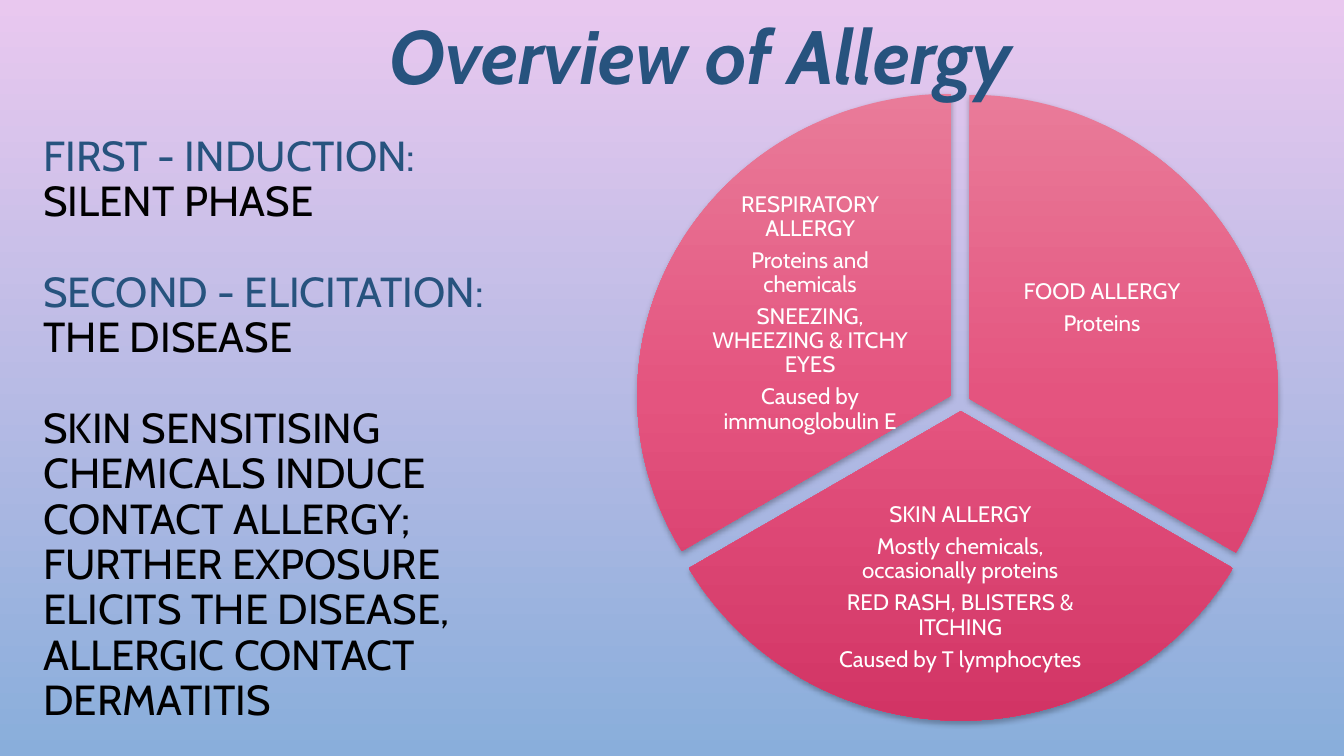
from copy import deepcopy
from dataclasses import dataclass

from lxml import etree
from pptx import Presentation
from pptx import util as u
from pptx.dml import color as dml
from pptx.enum import shapes, text
from pptx.oxml import ns

FONT = "Cabin"
COLOURS = {
    "sky_top": "E9C8EF",
    "sky_bottom": "89AEDB",
    "pink_top": "E97B99",
    "pink_middle": "E4547F",
    "pink_bottom": "D23465",
    "heading": "27537E",
    "body": "000000",
    "label": "FFFFFF",
    "shadow": "000000",
}


@dataclass
class Box:
    left: float
    top: float
    width: float
    height: float

    def lengths(self) -> list:
        return [u.Inches(n) for n in (self.left, self.top, self.width, self.height)]


@dataclass
class Sector:
    """A third of the pie; angles run clockwise from three o'clock."""
    pie: Box
    start: int
    end: int
    label: Box
    lines: list[str]


@dataclass
class BodyLine:
    text: str
    colour: str
    space_before: float = 0


SECTORS = [
    Sector(Box(6.55, 0.94, 6.13, 6.03), 270, 30, Box(9.89, 2.05, 2.08, 2.01),
           ["FOOD ALLERGY", "Proteins"]),
    Sector(Box(6.4, 1.01, 6.26, 6.14), 30, 150, Box(8.11, 4.88, 2.83, 1.9),
           ["SKIN ALLERGY", "Mostly chemicals, occasionally proteins",
            "RED RASH, BLISTERS & ITCHING", "Caused by T lymphocytes"]),
    Sector(Box(6.32, 0.93, 6.22, 5.99), 150, 270, Box(6.98, 2.11, 2.11, 2),
           ["RESPIRATORY ALLERGY", "Proteins and chemicals",
            "SNEEZING, WHEEZING & ITCHY EYES", "Caused by immunoglobulin E"]),
]

BODY_GAP = 32.4
BODY_LINES = [
    BodyLine("FIRST - INDUCTION:", "heading"),
    BodyLine("SILENT PHASE", "body"),
    BodyLine("SECOND - ELICITATION:", "heading", BODY_GAP),
    BodyLine("THE DISEASE", "body"),
    BodyLine("SKIN SENSITISING CHEMICALS INDUCE CONTACT ALLERGY; FURTHER EXPOSURE "
             "ELICITS THE DISEASE, ALLERGIC CONTACT DERMATITIS", "body", BODY_GAP),
]


def rgb(name: str) -> dml.RGBColor:
    return dml.RGBColor.from_string(COLOURS[name])


def fill_downwards(fill, names: list[str]) -> None:
    """Apply a top-to-bottom gradient with evenly spaced stops."""
    fill.gradient()
    fill.gradient_angle = 270
    stop_list = fill.gradient_stops[0]._gs.getparent()
    while len(stop_list) < len(names):
        stop_list.append(deepcopy(stop_list[-1]))
    for index, (stop, name) in enumerate(zip(fill.gradient_stops, names)):
        stop.color.rgb = rgb(name)
        stop.position = index / (len(names) - 1)


def add_soft_shadow(shape) -> None:
    shape.shadow.inherit = False
    effects = shape._element.spPr.find(ns.qn("a:effectLst"))
    shadow = etree.SubElement(effects, ns.qn("a:outerShdw"), blurRad=str(u.Pt(4)),
                              dist=str(u.Pt(2)), dir="5400000", rotWithShape="0")
    colour = etree.SubElement(shadow, ns.qn("a:srgbClr"), val=COLOURS["shadow"])
    etree.SubElement(colour, ns.qn("a:alpha"), val="28000")


def set_frame(frame, insets: tuple, anchor) -> None:
    frame.word_wrap = True
    frame.auto_size = text.MSO_AUTO_SIZE.NONE
    frame.vertical_anchor = anchor
    (frame.margin_left, frame.margin_top,
     frame.margin_right, frame.margin_bottom) = [u.Inches(inset) for inset in insets]


def format_runs(paragraph, size: float, colour: str) -> None:
    for run in paragraph.runs:
        run.font.name = FONT
        run.font.size = u.Pt(size)
        run.font.color.rgb = rgb(colour)


def place(shape, box: Box) -> None:
    shape.left, shape.top, shape.width, shape.height = box.lengths()


def add_sector(slide, sector: Sector) -> None:
    pie = slide.shapes.add_shape(shapes.MSO_SHAPE.PIE, *sector.pie.lengths())
    # Adjustments count 100000ths, angles 60000ths of a degree.
    pie.adjustments[0] = sector.start * 0.6
    pie.adjustments[1] = sector.end * 0.6
    fill_downwards(pie.fill, ["pink_top", "pink_middle", "pink_bottom"])
    pie.line.fill.background()
    add_soft_shadow(pie)

    frame = slide.shapes.add_textbox(*sector.label.lengths()).text_frame
    set_frame(frame, (0.02,) * 4, text.MSO_ANCHOR.MIDDLE)
    frame.text = "\n".join(sector.lines)
    for paragraph in frame.paragraphs:
        paragraph.alignment = text.PP_ALIGN.CENTER
        paragraph.line_spacing = 0.9
        paragraph.space_after = u.Pt(5.6)
        format_runs(paragraph, 16, "label")


def fill_body(body) -> None:
    place(body, Box(0.36, 1.54, 5.39, 5.9))
    frame = body.text_frame
    set_frame(frame, (0.07, 0.04, 0.07, 0.49), text.MSO_ANCHOR.MIDDLE)
    frame.text = "\n".join(line.text for line in BODY_LINES)
    for paragraph, line in zip(frame.paragraphs, BODY_LINES):
        properties = paragraph._p.get_or_add_pPr()
        properties.set("marL", "0")
        properties.set("indent", "0")
        etree.SubElement(properties, ns.qn("a:buNone"))
        paragraph.alignment = text.PP_ALIGN.LEFT
        paragraph.line_spacing = 0.9
        paragraph.space_before = u.Pt(line.space_before)
        format_runs(paragraph, 30, line.colour)


def fill_title(title) -> None:
    place(title, Box(3.76, 0.04, 6.58, 1.01))
    set_frame(title.text_frame, (0.1, 0.05, 0.1, 0.05), text.MSO_ANCHOR.TOP)
    title.text_frame.text = "Overview of Allergy"
    paragraph = title.text_frame.paragraphs[0]
    paragraph.alignment = text.PP_ALIGN.LEFT
    format_runs(paragraph, 54, "heading")
    paragraph.runs[0].font.bold = True
    paragraph.runs[0].font.italic = True


def main() -> None:
    presentation = Presentation()
    presentation.slide_width = u.Inches(13.33)
    presentation.slide_height = u.Inches(7.5)
    slide = presentation.slides.add_slide(presentation.slide_layouts[1])
    fill_downwards(slide.background.fill, ["sky_top", "sky_bottom"])
    for sector in SECTORS:
        add_sector(slide, sector)
    title, body = slide.shapes.title, slide.placeholders[1]
    fill_body(body)
    fill_title(title)
    # The title overlaps the pie, so both placeholders go to the front.
    for placeholder in (body, title):
        slide.shapes._spTree.append(placeholder._element)
    presentation.save("out.pptx")


if __name__ == "__main__":
    main()
